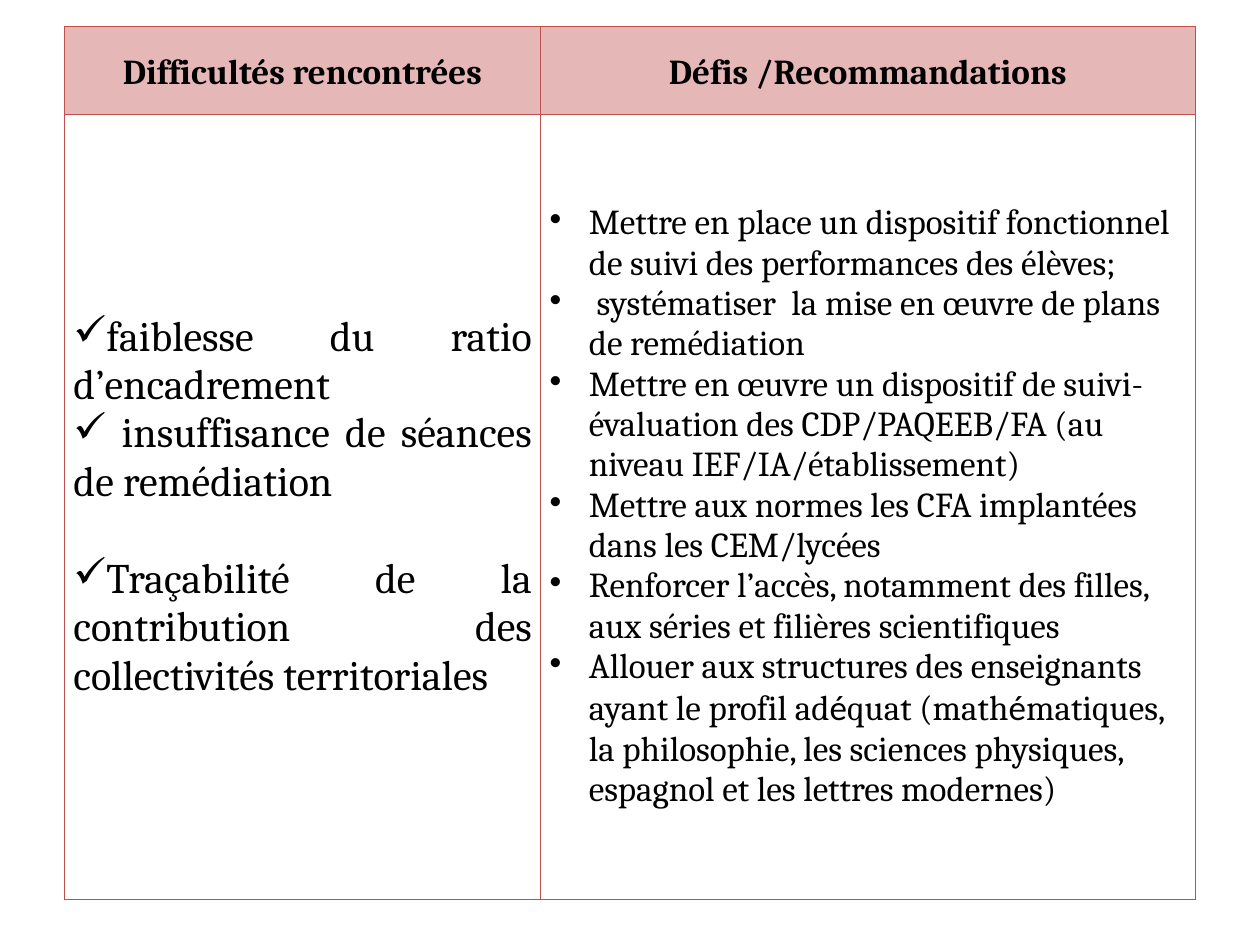
from lxml.etree import SubElement
from pptx import Presentation
from pptx.dml.color import RGBColor
from pptx.enum.text import MSO_ANCHOR, PP_ALIGN
from pptx.oxml.ns import qn
from pptx.util import Cm, Pt

COLORS = {"border": "C0504D", "header": "E5B8B7", "text": "000000"}
FONT = "Cambria"
ACCENT_FONT = "Calibri"

HEADERS = ["Difficultés rencontrées", "Défis /Recommandations"]
# Each difficulty is paired with the space before it, in points.
DIFFICULTIES = [
    ("faiblesse du ratio d’encadrement", 0),
    ("\u00a0insuffisance de séances de remédiation".replace("\u00a0", " "), 0),
    ("Traçabilité de la contribution des collectivités territoriales", 28),
]
# Each recommendation is a list of (text, font) runs.
RECOMMENDATIONS = [
    [("Mettre en place un dispositif fonctionnel de suivi des performances des élèves;", FONT)],
    [(" systématiser  la mise en œuvre de plans de remédiation", FONT)],
    [("Mettre en œuvre un dispositif de suivi-évaluation des CDP/PAQEEB/FA "
      "(au niveau IEF/IA/établissement)", FONT)],
    [("Mettre aux normes les CFA implantées dans les CEM/lycées", FONT)],
    [("Renforcer l’accès, notamment des filles, aux séries et filières scientifiques", FONT)],
    [("Allouer aux structures des enseignants ayant le profil ad", FONT),
     ("é", ACCENT_FONT), ("quat (math", FONT), ("é", ACCENT_FONT),
     ("matiques, la philosophie, les sciences physiques, espagnol et les lettres modernes)", FONT)],
]


def add_run(paragraph, text, size, font=FONT, bold=False):
    run = paragraph.add_run()
    run.text = text
    run.font.name = font
    run.font.size = Pt(size)
    run.font.bold = bold
    run.font.color.rgb = RGBColor.from_string(COLORS["text"])


def add_bullet(paragraph, character, indent=0):
    properties = paragraph._p.get_or_add_pPr()
    properties.set("marL", str(indent))
    properties.set("indent", str(-indent))
    SubElement(properties, qn("a:buChar"), char=character)


def paragraphs_for(cell, items):
    """Yield one paragraph of the cell with each item."""
    for index, item in enumerate(items):
        frame = cell.text_frame
        yield (frame.add_paragraph() if index else frame.paragraphs[0]), item


def style_cell(cell, fill=None):
    cell.vertical_anchor = MSO_ANCHOR.MIDDLE
    cell.margin_left = cell.margin_right = Cm(0.18)
    cell.margin_top = cell.margin_bottom = 0
    properties = cell._tc.get_or_add_tcPr()
    for side in ("lnL", "lnR", "lnT", "lnB"):
        line = SubElement(properties, qn(f"a:{side}"), w=str(Pt(1)))
        solid = SubElement(line, qn("a:solidFill"))
        SubElement(solid, qn("a:srgbClr"), val=COLORS["border"])
    if fill:
        cell.fill.solid()
        cell.fill.fore_color.rgb = RGBColor.from_string(fill)
    else:
        cell.fill.background()


def fill_header(cell, text):
    style_cell(cell, COLORS["header"])
    paragraph = cell.text_frame.paragraphs[0]
    paragraph.alignment = PP_ALIGN.CENTER
    paragraph.line_spacing = 1.15
    add_run(paragraph, text, 20, bold=True)


def fill_difficulties(cell):
    style_cell(cell)
    for paragraph, (text, space) in paragraphs_for(cell, DIFFICULTIES):
        paragraph.alignment = PP_ALIGN.JUSTIFY
        if space:
            paragraph.space_before = Pt(space)
        add_bullet(paragraph, "✓")
        add_run(paragraph, text, 24)


def fill_recommendations(cell):
    style_cell(cell)
    for paragraph, runs in paragraphs_for(cell, RECOMMENDATIONS):
        paragraph.alignment = PP_ALIGN.LEFT
        add_bullet(paragraph, "•", Cm(0.79))
        for text, font in runs:
            add_run(paragraph, text, 20, font)


def add_findings_table(slide, left, top, widths, heights):
    table = slide.shapes.add_table(
        len(heights), len(widths), left, top, sum(widths), sum(heights)).table
    table.first_row = table.horz_banding = False
    for column, width in zip(table.columns, widths):
        column.width = width
    for row, height in zip(table.rows, heights):
        row.height = height
    for index, text in enumerate(HEADERS):
        fill_header(table.cell(0, index), text)
    fill_difficulties(table.cell(1, 0))
    fill_recommendations(table.cell(1, 1))


def main():
    presentation = Presentation()
    presentation.slide_width, presentation.slide_height = Cm(25.4), Cm(19.05)
    slide = presentation.slides.add_slide(presentation.slide_layouts[6])
    add_findings_table(slide, Cm(1.3), Cm(0.53),
                       widths=[Cm(9.6), Cm(13.2)], heights=[Cm(1.78), Cm(15.82)])
    presentation.save("out.pptx")


if __name__ == "__main__":
    main()
